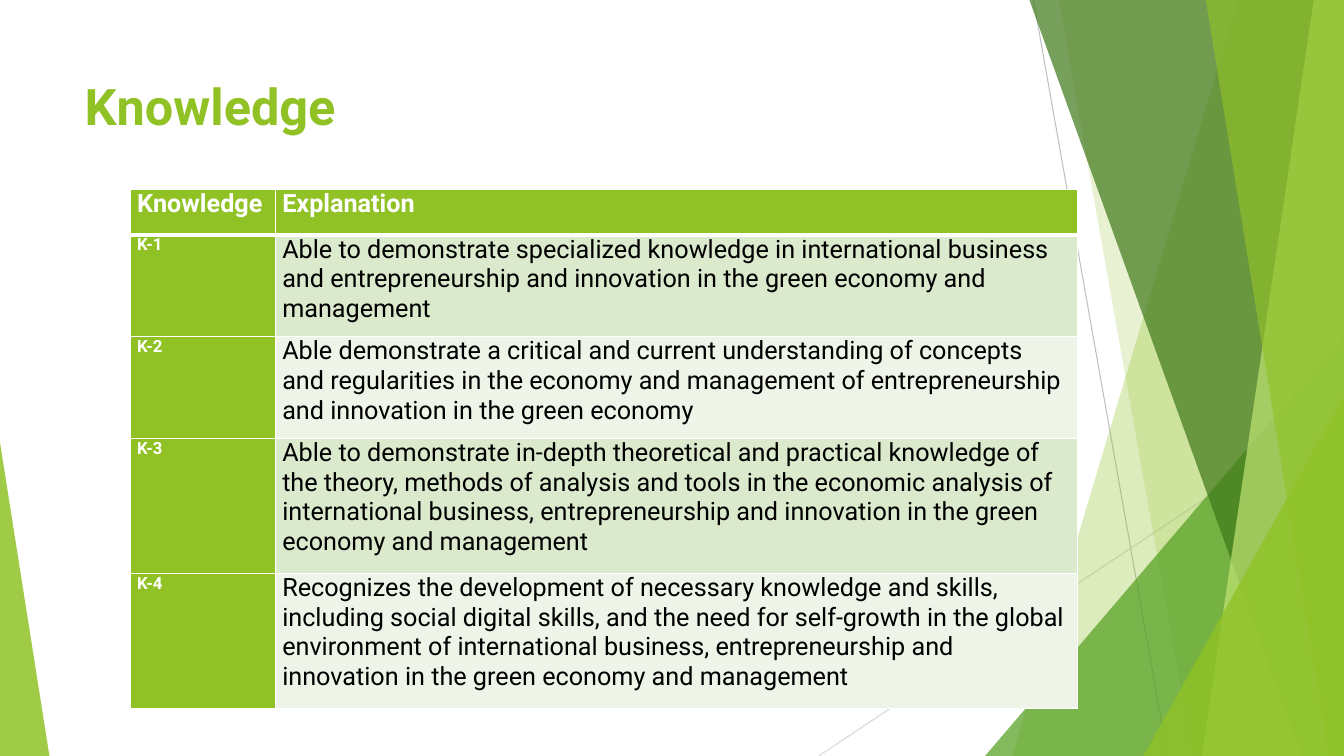
from lxml.etree import SubElement
from pptx import Presentation
from pptx.dml.color import RGBColor
from pptx.enum.shapes import MSO_CONNECTOR as Connector, MSO_SHAPE as Preset
from pptx.enum.text import MSO_ANCHOR as Anchor, PP_ALIGN as Align
from pptx.oxml import parse_xml
from pptx.oxml.ns import nsdecls, qn
from pptx.util import Inches, Pt

WIDTH, HEIGHT = 13.33, 7.5
FONT = "Roboto"
COLORS = {
    "lime": "90C226", "green": "54A021", "forest": "3F7819", "pale": "C0E474",
    "white": "FFFFFF", "black": "000000", "rule": "BFBFBF", "faint": "D9D9D9",
    "odd": "DBE9CD", "even": "EEF4E8",
}
TITLE = "Knowledge"
HEADER = ("Knowledge", "Explanation")
EXPLANATIONS = [
    "Able to demonstrate specialized knowledge in international business and entrepreneurship "
    "and innovation in the green economy and management",
    "Able demonstrate a critical and current understanding of concepts and regularities in the "
    "economy and management of entrepreneurship and innovation in the green economy",
    "Able to demonstrate in-depth theoretical and practical knowledge of the theory, methods of "
    "analysis and tools in the economic analysis of international business, entrepreneurship "
    "and innovation in the green economy and management",
    "Recognizes the development of necessary knowledge and skills, including social digital "
    "skills, and the need for self-growth in the global environment of international business, "
    "entrepreneurship and innovation in the green economy and management",
]
COLUMNS = (1.44, 7.96)
ROWS = (0.45, 1.01, 1.01, 1.34, 1.34)
LINES = [
    ((10.25, 0), (11.58, HEIGHT), "rule"),
    ((WIDTH, 4.03), (8.12, HEIGHT), "faint"),
]
# kind, then top and bottom of a band's left edge, or left, top, width and apex of a triangle
DECOR = [
    ("band", (12.28, 10.04), "lime", 30),
    ("band", (10.5, 11.83), "lime", 20),
    ("triangle", (9.77, 3.33, 3.56, 1), "green", 72),
    ("band", (10.21, 12.91), "forest", 70),
    ("band", (13.03, 11.92), "pale", 70),
    ("band", (11.96, 13.18), "lime", 65),
    ("triangle", (11.34, 3.93, 1.99, 1), "lime", 80),
    ("triangle", (0, 4.39, 0.49, 0), "lime", 85),
]


def color(name):
    return RGBColor.from_string(COLORS[name])


def add_line(page, start, end, name):
    line = page.shapes.add_connector(Connector.STRAIGHT, *map(Inches, start + end))
    line.line.color.rgb = color(name)
    line.line.width = Pt(0.75)
    SubElement(line._element.spPr, qn("a:effectLst"))


def add_decor(page, kind, place, name, opacity):
    if kind == "band":
        top, bottom = place
        points = [(top, 0), (WIDTH, 0), (WIDTH, HEIGHT), (bottom, HEIGHT)]
        corners = [(Inches(x), Inches(y)) for x, y in points]
        outline = page.shapes.build_freeform(*corners[0])
        outline.add_line_segments(corners[1:], close=True)
        shape = outline.convert_to_shape()
    else:
        left, top, width, apex = place
        shape = page.shapes.add_shape(
            Preset.ISOSCELES_TRIANGLE, *map(Inches, (left, top, width, HEIGHT - top)))
        shape.adjustments[0] = apex
    shape.shadow.inherit = False
    shape.line.fill.background()
    shape.fill.solid()
    shape.fill.fore_color.rgb = color(name)
    fill = shape._element.spPr.find(qn("a:solidFill"))
    SubElement(fill[0], qn("a:alpha"), val=str(opacity * 1000))


def style(para, size, name, bold):
    para.font.name = FONT
    para.font.size = Pt(size)
    para.font.bold = bold
    para.font.color.rgb = color(name)


def fill_cell(cell, text, size, ink, bold, fill, bottom):
    cell.text = text
    cell.margin_left = cell.margin_right = Inches(0.07)
    cell.margin_top = cell.margin_bottom = 0
    style(cell.text_frame.paragraphs[0], size, ink, bold)
    cell.fill.solid()
    cell.fill.fore_color.rgb = color(fill)
    properties = cell._tc.get_or_add_tcPr()
    for index, (side, width) in enumerate(zip("LRTB", (1, 1, 1, bottom))):
        properties.insert(index, parse_xml(
            f'<a:ln{side} {nsdecls("a")} w="{Pt(width)}"><a:solidFill>'
            f'<a:srgbClr val="{COLORS["white"]}"/></a:solidFill></a:ln{side}>'))


def add_knowledge_table(page):
    frame = page.shapes.add_table(
        len(ROWS), len(COLUMNS), *map(Inches, (1.29, 1.88, sum(COLUMNS), sum(ROWS))))
    table = frame.table
    for column, width in zip(table.columns, COLUMNS):
        column.width = Inches(width)
    for row, height in zip(table.rows, ROWS):
        row.height = Inches(height)
    for index, text in enumerate(HEADER):
        fill_cell(table.cell(0, index), text, 18, "white", True, "lime", 3)
    for number, text in enumerate(EXPLANATIONS, 1):
        shade = "odd" if number % 2 else "even"
        fill_cell(table.cell(number, 0), f"K-{number}", 12, "white", True, "lime", 1)
        fill_cell(table.cell(number, 1), text, 18, "black", False, shade, 1)


def main():
    deck = Presentation()
    deck.slide_width, deck.slide_height = Inches(WIDTH), Inches(HEIGHT)
    page = deck.slides.add_slide(deck.slide_layouts.get_by_name("Title Only"))
    for line in LINES:
        add_line(page, *line)
    for decor in DECOR:
        add_decor(page, *decor)

    title = page.shapes.title
    title.left, title.top, title.width, title.height = map(Inches, (0.74, 0.67, 9.4, 0.75))
    title.text = TITLE
    title.text_frame.vertical_anchor = Anchor.MIDDLE
    para = title.text_frame.paragraphs[0]
    para.alignment = Align.LEFT
    style(para, 36, "lime", True)

    add_knowledge_table(page)
    deck.save("out.pptx")


if __name__ == "__main__":
    main()
